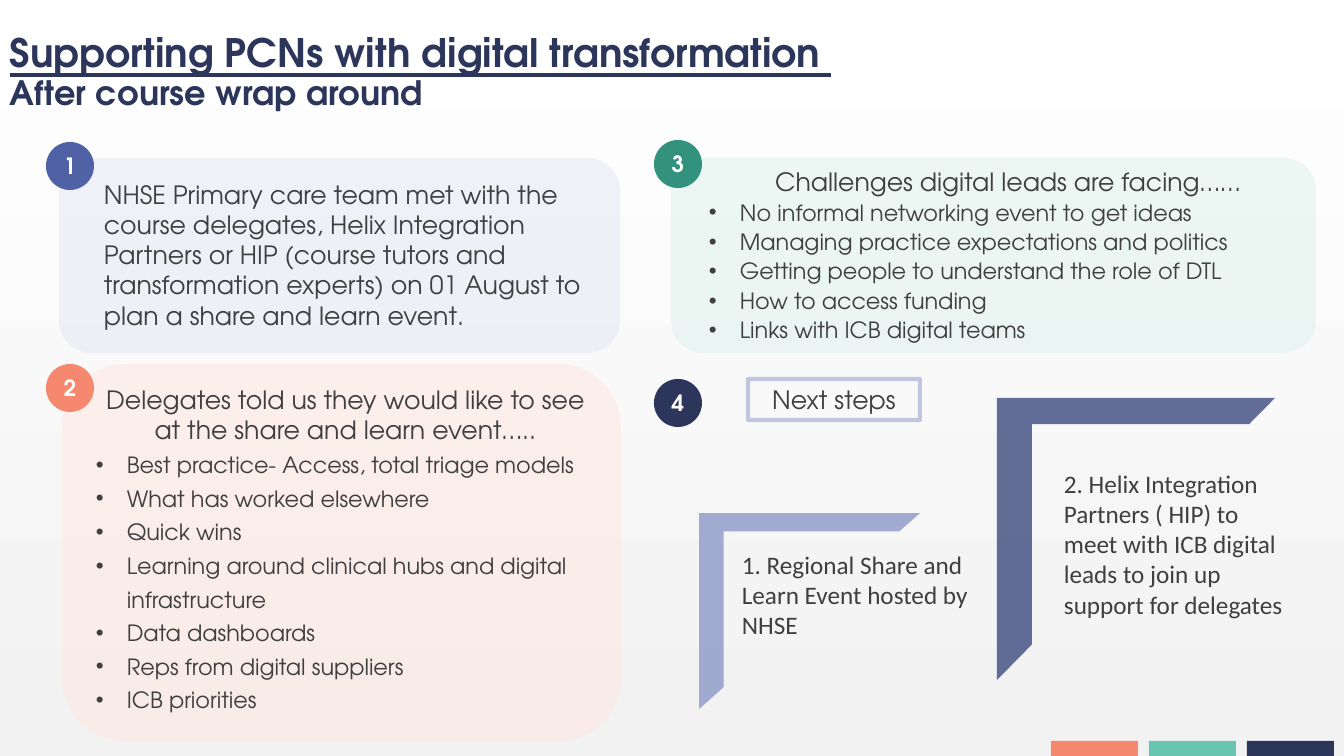
import pptx
import pptx.util
import pptx.dml.color
import pptx.enum.shapes
import pptx.enum.text
import pptx.oxml.ns
import lxml.etree

PX = 914400 / 100.8
COLORS = {
    "navy": "2C365B", "coral": "F5886F", "mint": "68C5AF", "indigo": "5062A5",
    "green": "33927E", "white": "FFFFFF", "text": "3F3F3F", "base": "F2F2F2",
    "pale_blue": "E6E9F3", "pale_coral": "FDE7E2", "pale_green": "E1F3EF",
    "lilac": "6778B6", "slate": "3D4B7F", "outline": "9AA5CE",
}
HEADING_FONT = "TeX Gyre Adventor"
KINDS = pptx.enum.shapes.MSO_SHAPE
CENTER = pptx.enum.text.PP_ALIGN.CENTER
LEFT = pptx.enum.text.PP_ALIGN.LEFT
TOP = pptx.enum.text.MSO_ANCHOR.TOP
MIDDLE = pptx.enum.text.MSO_ANCHOR.MIDDLE
qn = pptx.oxml.ns.qn

prs = pptx.Presentation()
prs.slide_width = round(1344 * PX)
prs.slide_height = round(756 * PX)
slide = prs.slides.add_slide(prs.slide_layouts[6])


def add_block(kind, box, color=None, alpha=100):
    """Add a preset shape, or a text box when kind is None."""
    lengths = [round(n * PX) for n in box]
    if kind is None:
        return slide.shapes.add_textbox(*lengths)
    block = slide.shapes.add_shape(kind, *lengths)
    block.shadow.inherit = False
    if color is None:
        block.fill.background()
        return block
    block.line.fill.background()
    block.fill.solid()
    block.fill.fore_color.rgb = pptx.dml.color.RGBColor.from_string(COLORS[color])
    if alpha < 100:
        tone = block.fill._xPr.find(qn("a:solidFill"))[0]
        lxml.etree.SubElement(tone, qn("a:alpha")).set("val", str(alpha * 1000))
    return block


def write(block, lines, anchor=TOP):
    """Fill a block with (text, format) lines."""
    frame = block.text_frame
    frame.word_wrap = True
    frame.vertical_anchor = anchor
    for i, (text, style) in enumerate(lines):
        para = frame.paragraphs[0] if i == 0 else frame.add_paragraph()
        para.alignment = style.get("align", LEFT)
        if "spacing" in style:
            para.line_spacing = style["spacing"]
        if style.get("bullet"):
            props = para._p.get_or_add_pPr()
            indent = round(31 * PX)
            props.set("marL", str(indent))
            props.set("indent", str(-indent))
            lxml.etree.SubElement(props, qn("a:buFont")).set("typeface", "Arial")
            lxml.etree.SubElement(props, qn("a:buChar")).set("char", "•")
        run = para.add_run()
        run.text = text
        font = {"name": HEADING_FONT, "size": pptx.util.Pt(18), **style.get("font", {})}
        for key, value in font.items():
            setattr(run.font, key, value)
        run.font.color.rgb = pptx.dml.color.RGBColor.from_string(
            COLORS[style.get("color", "text")])


# Background
backdrop = slide.background.fill
backdrop.gradient()
backdrop.gradient_angle = 90
for stop, color in zip(backdrop.gradient_stops, ("base", "white")):
    stop.color.rgb = pptx.dml.color.RGBColor.from_string(COLORS[color])

# Footer swatches
for i, color in enumerate(("coral", "mint", "navy")):
    add_block(KINDS.RECTANGLE, (1051 + 98 * i, 741, 87, 15), color)

# Title
title_style = {"color": "navy", "spacing": 0.9}
write(add_block(None, (0, 0, 1290, 146)), [
    ("Supporting PCNs with digital transformation ",
     {**title_style, "font": {"size": pptx.util.Pt(28), "bold": True, "underline": True}}),
    ("After course wrap around",
     {**title_style, "font": {"size": pptx.util.Pt(24), "bold": True}}),
], MIDDLE)

# Cards: panel, panel colour, text area, heading, heading alignment, bullet pitch, bullets
cards = [
    ((59, 158, 561, 195), "pale_blue", (94, 174, 503, 163),
     "NHSE Primary care team met with the course delegates, Helix Integration "
     "Partners or HIP (course tutors and transformation experts) on 01 August to "
     "plan a share and learn event.", LEFT, 0, []),
    ((62, 364, 559, 377), "pale_coral", (86, 379, 519, 340),
     "Delegates told us they would like to see at the share and learn event…..",
     CENTER, 24,
     ["Best practice- Access, total triage models", "What has worked elsewhere",
      "Quick wins", "Learning around clinical hubs and digital infrastructure",
      "Data dashboards", "Reps from digital suppliers", "ICB priorities"]),
    ((671, 158, 645, 195), "pale_green", (699, 161, 618, 186),
     "Challenges digital leads are facing……", CENTER, 21,
     ["No informal networking event to get ideas",
      "Managing practice expectations and politics",
      "Getting people to understand the role of DTL",
      "How to access funding", "Links with ICB digital teams"]),
]
for panel, color, area, heading, align, pitch, bullets in cards:
    add_block(KINDS.ROUNDED_RECTANGLE, panel, color, 59)
    bullet_style = {"bullet": True, "spacing": pptx.util.Pt(pitch),
                    "font": {"size": pptx.util.Pt(16)}}
    write(add_block(None, area),
          [(heading, {"align": align})] + [(item, bullet_style) for item in bullets])

# Next steps
steps = [
    ((699, 513, 221, 196), "lilac", 59, (732, 544, 246, 102),
     "1. Regional Share and Learn Event hosted by NHSE"),
    ((997, 398, 278, 282), "slate", 80, (1054, 463, 246, 163),
     "2. Helix Integration Partners ( HIP) to meet with ICB digital leads to join up "
     "support for delegates"),
]
for bracket_box, color, alpha, area, step in steps:
    bracket = add_block(KINDS.HALF_FRAME, bracket_box, color, alpha)
    bracket.adjustments[0] = 0.094
    bracket.adjustments[1] = 0.126
    write(add_block(None, area), [(step, {"font": {"name": "Calibri"}})])

next_steps = add_block(KINDS.RECTANGLE, (748, 379, 172, 41))
next_steps.line.width = pptx.util.Pt(3)
next_steps.line.color.rgb = pptx.dml.color.RGBColor.from_string(COLORS["outline"])
outline_tone = next_steps.line.fill._xPr.find(qn("a:solidFill"))[0]
lxml.etree.SubElement(outline_tone, qn("a:alpha")).set("val", "60000")
write(next_steps, [("Next steps", {"align": CENTER})])

# Number badges
badges = [(46, 142, "indigo"), (46, 364, "coral"), (654, 140, "green"), (654, 379, "navy")]
for number, (left, top, color) in enumerate(badges, 1):
    badge_style = {"align": CENTER, "color": "white",
                   "font": {"size": pptx.util.Pt(16), "bold": True}}
    write(add_block(KINDS.OVAL, (left, top, 48, 48), color),
          [(str(number), badge_style)], MIDDLE)

prs.save("out.pptx")
